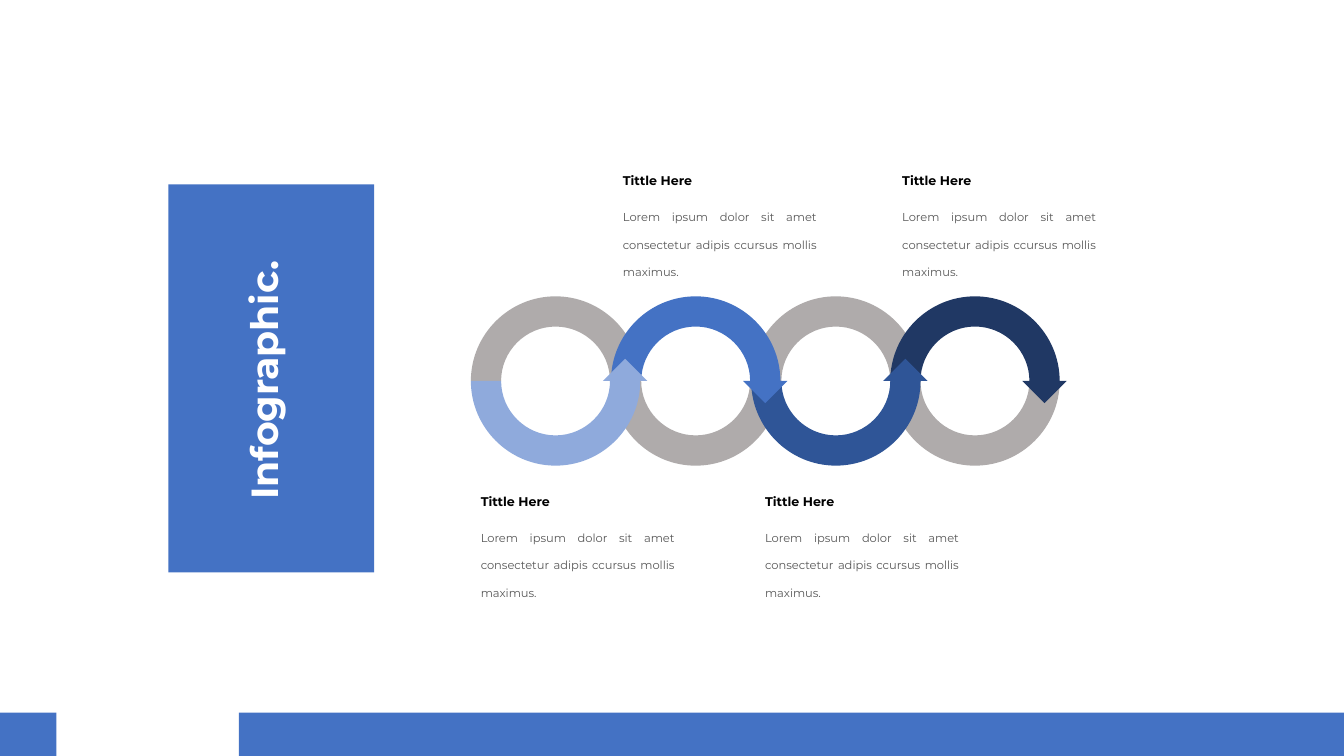
"""Build an infographic slide with a chain of four half-ring arrows."""
from copy import deepcopy
from dataclasses import dataclass

from pptx import Presentation
from pptx.dml.color import RGBColor
from pptx.enum.shapes import MSO_SHAPE
from pptx.enum.text import MSO_AUTO_SIZE, PP_ALIGN
from pptx.oxml.ns import qn
from pptx.util import Inches, Pt


@dataclass(frozen=True)
class Theme:
    font: str = "Montserrat"
    blue: str = "4472C4"
    gray: str = "AFABAB"
    white: str = "FFFFFF"
    title: str = "000000"
    body: str = "595959"
    steps: tuple = ("8FAADC", "4472C4", "2F5597", "203864")
    banner_size: float = 27
    title_size: float = 9
    body_size: float = 8.2


theme = Theme()


def paint(shape, color):
    shape.shadow.inherit = False
    shape.fill.solid()
    shape.fill.fore_color.rgb = RGBColor.from_string(color)
    shape.line.fill.background()


def add_text(page, text, left, top, width, height, size, color, bold=True):
    box = page.shapes.add_textbox(Inches(left), Inches(top), Inches(width), Inches(height))
    box.text_frame.word_wrap = True
    box.text_frame.auto_size = MSO_AUTO_SIZE.SHAPE_TO_FIT_TEXT
    para = box.text_frame.paragraphs[0]
    span = para.add_run()
    span.text = text
    span.font.name = theme.font
    span.font.size = Pt(size)
    span.font.bold = bold
    span.font.color.rgb = RGBColor.from_string(color)
    return box


deck = Presentation()
deck.slide_width = Inches(13.33)
deck.slide_height = Inches(7.5)
page = deck.slides.add_slide(deck.slide_layouts[6])

for left, top, width, height in (
    (2.37, 7.07, 10.96, 0.43),
    (0, 7.07, 0.56, 0.43),
    (1.67, 1.83, 2.04, 3.85),
):
    panel = page.shapes.add_shape(
        MSO_SHAPE.RECTANGLE, Inches(left), Inches(top), Inches(width), Inches(height)
    )
    paint(panel, theme.blue)

ring_centers = (5.51, 6.9, 8.29, 9.67)
middle = 3.78
outer_radius, inner_radius = 0.84, 0.54
arrow_center, arrow_reach = 0.69, 0.22
curve_pull = 0.55

for is_arrow in (False, True):
    for index in reversed(range(len(ring_centers))):
        side = 1 if (index % 2 == 0) == is_arrow else -1
        outer = [(-outer_radius, 0), (0, side * outer_radius), (outer_radius, 0)]
        inner = [(inner_radius, 0), (0, side * inner_radius), (-inner_radius, 0)]
        head = [
            (arrow_center + arrow_reach, 0),
            (arrow_center, -side * arrow_reach),
            (arrow_center - arrow_reach, 0),
        ]
        outline = outer + (head if is_arrow else []) + inner
        points = [(Inches(ring_centers[index] + x), Inches(middle + y)) for x, y in outline]
        builder = page.shapes.build_freeform(*points[0])
        builder.add_line_segments(points[1:], close=True)
        ring = builder.convert_to_shape()
        paint(ring, theme.steps[index] if is_arrow else theme.gray)

        segments = list(ring._element.iter(qn("a:lnTo")))
        for order, segment in enumerate(segments[:2] + segments[-2:]):
            start, end = segment.getprevious()[-1], segment[-1]
            corner_x = (start if order % 2 == 0 else end).get("x")
            corner_y = (end if order % 2 == 0 else start).get("y")
            segment.tag = qn("a:cubicBezTo")
            for position, anchor in enumerate((start, end)):
                control = deepcopy(anchor)
                for axis, corner in (("x", corner_x), ("y", corner_y)):
                    origin = int(anchor.get(axis))
                    control.set(axis, str(round(origin + curve_pull * (int(corner) - origin))))
                segment.insert(position, control)

for left, top in ((4.67, 4.85), (6.08, 1.67), (8.85, 1.67), (7.49, 4.85)):
    add_text(page, "Tittle Here", left, top, 2.12, 0.25, theme.title_size, theme.title)
    body = add_text(
        page,
        "Lorem ipsum dolor sit amet consectetur adipis ccursus mollis maximus.",
        left, top + 0.23, 2.12, 0.89, theme.body_size, theme.body, bold=False,
    )
    body.text_frame.paragraphs[0].alignment = PP_ALIGN.JUSTIFY
    body.text_frame.paragraphs[0].line_spacing = 2.0

banner = add_text(
    page, "Infographic.", 1.32, 3.48, 2.59, 0.56, theme.banner_size, theme.white
)
banner.rotation = 270

deck.save("out.pptx")
